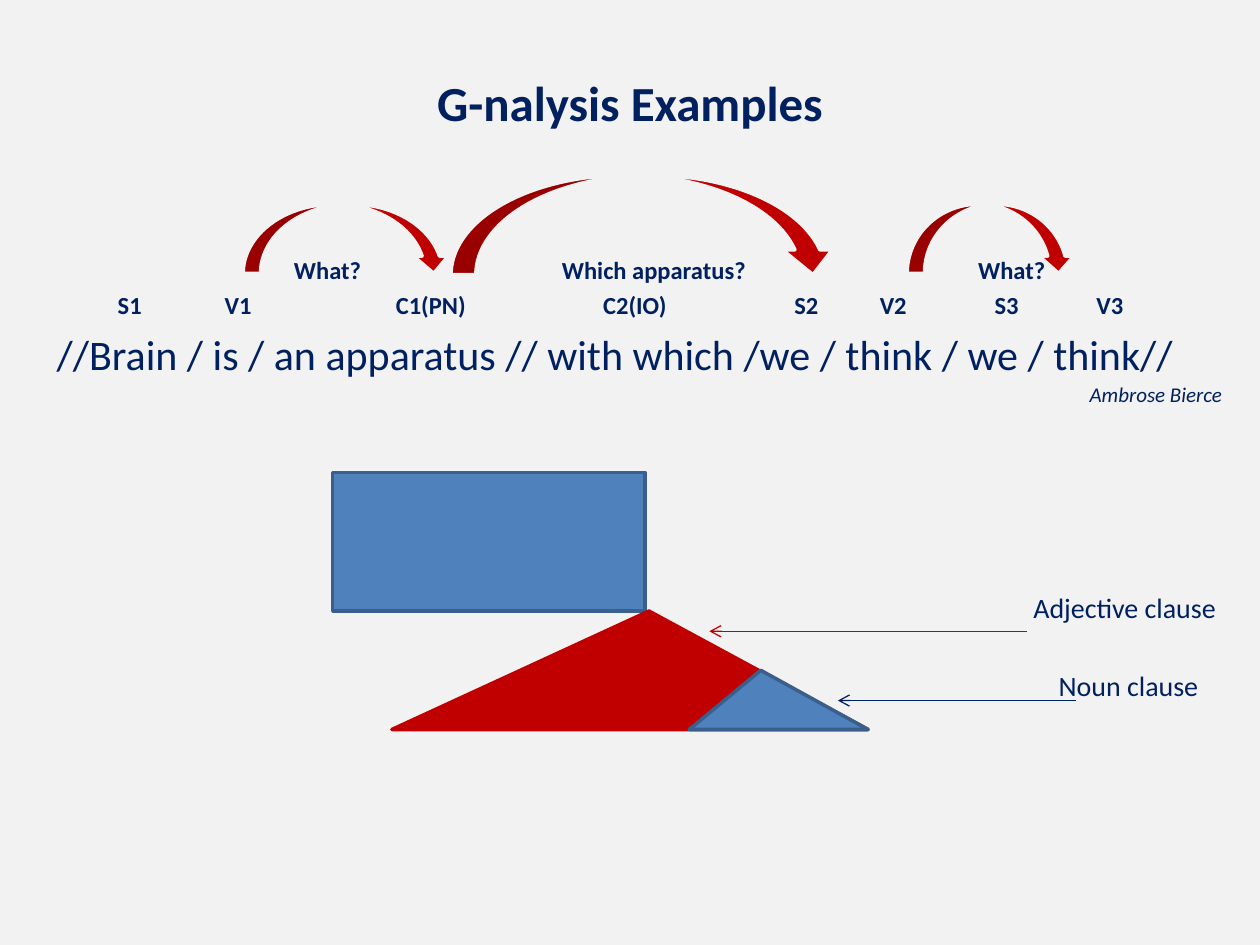
from lxml.etree import SubElement
from pptx import Presentation
from pptx.dml.color import RGBColor as RGB
from pptx.enum.shapes import MSO_CONNECTOR as LINK, MSO_SHAPE as SHAPE
from pptx.enum.text import MSO_ANCHOR as ANCHOR, PP_ALIGN as ALIGN
from pptx.oxml.ns import qn
from pptx.util import Inches, Pt

HEX = {"navy": "002060", "red": "C00000", "blue": "4F81BD",
       "edge": "3A5F8C", "paper": "F2F2F2"}

deck = Presentation()
deck.slide_width, deck.slide_height = Inches(10), Inches(7.5)
slide = deck.slides.add_slide(deck.slide_layouts[6])
slide.background.fill.solid()
slide.background.fill.fore_color.rgb = RGB.from_string(HEX["paper"])


def write(text, left, mid, width, align=ALIGN.CENTER, **style):
    """Add a one-line text box centred vertically on mid."""
    high = 0.5
    box = slide.shapes.add_textbox(Inches(left), Inches(mid - high / 2),
                                   Inches(width), Inches(high))
    frame = box.text_frame
    frame.word_wrap = True
    frame.vertical_anchor = ANCHOR.MIDDLE
    for side in ("left", "right", "top", "bottom"):
        setattr(frame, f"margin_{side}", 0)
    line = frame.paragraphs[0]
    line.text, line.alignment = text, align
    font = line.runs[0].font
    font.name = "Calibri"
    font.color.rgb = RGB.from_string(HEX["navy"])
    for key, value in style.items():
        setattr(font, key, value)


write("G-nalysis Examples", 0.5, 0.81, 9, size=Pt(28), bold=True)

# Rows of labels: vertical middle, box width, then text and centre of each
rows = [
    (2.14, 1.6, [("What?", 2.6), ("Which apparatus?", 5.19), ("What?", 8.03)]),
    (2.42, 0.66, [("S1", 1.03), ("V1", 1.89), ("C1(PN)", 3.42),
                  ("C2(IO)", 5.04), ("S2", 6.4), ("V2", 7.09),
                  ("S3", 7.99), ("V3", 8.81)]),
]
for mid, width, labels in rows:
    for text, centre in labels:
        write(text, centre - width / 2, mid, width, size=Pt(14), bold=True)

write("//Brain / is / an apparatus // with which /we / think / we / think//",
      0.45, 2.81, 9.3, ALIGN.LEFT, size=Pt(24))

asides = [
    ("Ambrose Bierce", 9.7, 3.13, {"size": Pt(12), "italic": True}),
    ("Adjective clause", 9.65, 4.82, {"size": Pt(16)}),
    ("Noun clause", 9.51, 5.44, {"size": Pt(16)}),
]
for text, right, mid, style in asides:
    write(text, right - 2, mid, 2, ALIGN.RIGHT, **style)

# Kind, left, top, width, height, fill, line, apex of a triangle
figures = [
    (SHAPE.CURVED_DOWN_ARROW, 1.93, 1.62, 1.65, 0.55, "red", "paper", None),
    (SHAPE.CURVED_DOWN_ARROW, 3.58, 1.39, 3.07, 0.79, "red", "paper", None),
    (SHAPE.CURVED_DOWN_ARROW, 7.2, 1.62, 1.34, 0.55, "red", "paper", None),
    (SHAPE.RECTANGLE, 2.64, 3.75, 2.48, 1.1, "blue", "edge", None),
    (SHAPE.ISOSCELES_TRIANGLE, 3.11, 4.85, 3.78, 0.94, "red", "red", 0.54),
    (SHAPE.ISOSCELES_TRIANGLE, 5.47, 5.32, 1.42, 0.47, "blue", "edge", 0.4),
]
for kind, *place, fill, edge, apex in figures:
    shape = slide.shapes.add_shape(kind, *map(Inches, place))
    shape.shadow.inherit = False
    shape.fill.solid()
    shape.fill.fore_color.rgb = RGB.from_string(HEX[fill])
    shape.line.color.rgb = RGB.from_string(HEX[edge])
    shape.line.width = Pt(2)
    if apex is not None:
        shape.adjustments[0] = apex

for start, end, y, color in [(8.15, 5.63, 5.01, "red"),
                             (8.54, 6.65, 5.56, "navy")]:
    arrow = slide.shapes.add_connector(LINK.STRAIGHT, Inches(start), Inches(y),
                                       Inches(end), Inches(y))
    arrow.line.color.rgb = RGB.from_string(HEX[color])
    arrow.line.width = Pt(0.75)
    SubElement(arrow.line._get_or_add_ln(), qn("a:tailEnd"), type="arrow")
    SubElement(arrow._element.spPr, qn("a:effectLst"))

deck.save("out.pptx")
